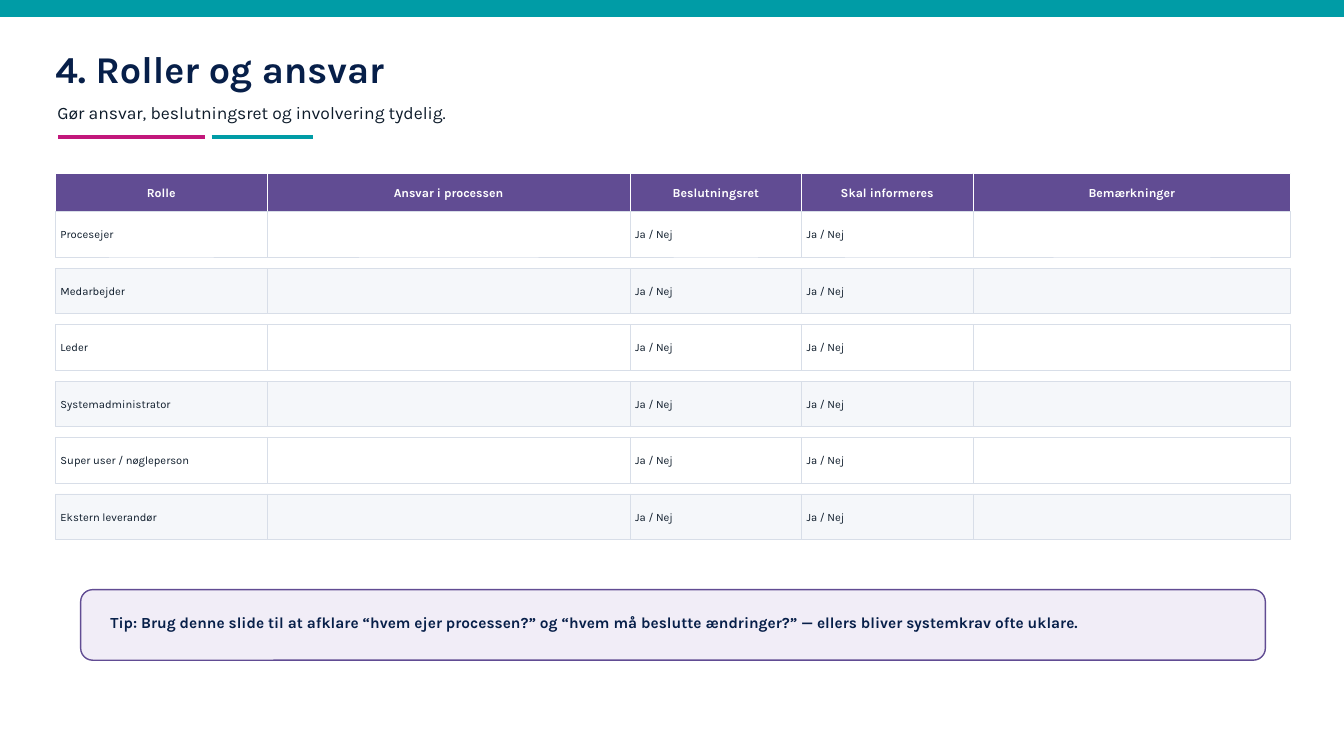
"""Build the slide on roles and responsibilities."""
import pptx
import pptx.util
import pptx.dml.color
import pptx.enum.shapes
import pptx.enum.text
import pptx.oxml.ns
import lxml.etree

Inches = pptx.util.Inches
Shape = pptx.enum.shapes.MSO_SHAPE
Align = pptx.enum.text.PP_ALIGN

FONT = "Karla"
COLORS = {
    "teal": "009CA6",
    "pink": "C2187B",
    "purple": "614C93",
    "lilac": "F1EDF7",
    "navy": "071F49",
    "ink": "0D1B2A",
    "white": "FFFFFF",
    "pale": "F5F7FA",
    "grey": "D8DEE8",
}
HEADS = [
    ("Rolle", 2.1),
    ("Ansvar i processen", 3.6),
    ("Beslutningsret", 1.7),
    ("Skal informeres", 1.7),
    ("Bemærkninger", 3.15),
]
ROLES = [
    "Procesejer",
    "Medarbejder",
    "Leder",
    "Systemadministrator",
    "Super user / nøgleperson",
    "Ekstern leverandør",
]
CHOICE = "Ja / Nej"
TIP = ("Tip: Brug denne slide til at afklare “hvem ejer processen?” og "
       "“hvem må beslutte ændringer?” — ellers bliver systemkrav ofte uklare.")


def color(name):
    return pptx.dml.color.RGBColor.from_string(COLORS[name])


def write(shape, text, size, ink, bold=False, align=Align.LEFT, inset=(0, 0, 0, 0)):
    frame = shape.text_frame
    frame.word_wrap = True
    frame.vertical_anchor = pptx.enum.text.MSO_ANCHOR.MIDDLE
    (frame.margin_left, frame.margin_top,
     frame.margin_right, frame.margin_bottom) = map(Inches, inset)
    para = frame.paragraphs[0]
    para.text = text
    para.alignment = align
    para.font.name = FONT
    para.font.size = pptx.util.Pt(size)
    para.font.bold = bold
    para.font.color.rgb = color(ink)


def add_label(slide, box, text, size, ink, bold=False):
    label = slide.shapes.add_textbox(*map(Inches, box))
    write(label, text, size, ink, bold)


def add_box(slide, box, fill, line, width, kind=Shape.RECTANGLE):
    shape = slide.shapes.add_shape(kind, *map(Inches, box))
    shape.shadow.inherit = False
    shape.fill.solid()
    shape.fill.fore_color.rgb = color(fill)
    shape.line.color.rgb = color(line)
    shape.line.width = pptx.util.Pt(width)
    return shape


def add_rule(slide, left, right, top, ink):
    rule = slide.shapes.add_connector(
        pptx.enum.shapes.MSO_CONNECTOR.STRAIGHT,
        Inches(left), Inches(top), Inches(right), Inches(top))
    rule.line.color.rgb = color(ink)
    rule.line.width = pptx.util.Pt(3)
    props = rule.element.spPr
    lxml.etree.SubElement(props, pptx.oxml.ns.qn("a:effectLst"))


def add_row(slide, top, high, texts, fill, line, style):
    left = 0.55
    for text, (_, wide) in zip(texts, HEADS):
        cell = add_box(slide, (left, top, wide, high), fill, line, 0.4)
        if text:
            write(cell, text, **style)
        left += wide


def add_grid(slide):
    head = dict(size=8.8, ink="white", bold=True, align=Align.CENTER)
    body = dict(size=8, ink="ink", inset=(0.05, 0, 0.05, 0))
    add_row(slide, 1.72, 0.38, [name for name, _ in HEADS], "purple", "white", head)
    for i, role in enumerate(ROLES):
        fill = "pale" if i % 2 else "white"
        texts = [role, "", CHOICE, CHOICE, ""]
        add_row(slide, 2.1 + 0.56 * i, 0.45, texts, fill, "grey", body)


def add_tip(slide):
    card = add_box(slide, (0.8, 5.85, 11.75, 0.7), "lilac", "purple", 1,
                   Shape.ROUNDED_RECTANGLE)
    card.adjustments[0] = 0.17
    write(card, TIP, 11, "navy", bold=True, inset=(0.26, 0, 0.26, 0.06))


def main():
    deck = pptx.Presentation()
    deck.slide_width = Inches(13.33)
    deck.slide_height = Inches(7.5)
    slide = deck.slides.add_slide(deck.slide_layouts[6])
    add_box(slide, (0, 0, 13.33, 0.16), "teal", "teal", 1)
    add_label(slide, (0.55, 0.45, 8.8, 0.45), "4. Roller og ansvar", 27, "navy", True)
    add_label(slide, (0.57, 0.95, 9.8, 0.33),
              "Gør ansvar, beslutningsret og involvering tydelig.", 12.5, "ink")
    add_rule(slide, 0.58, 2.03, 1.36, "pink")
    add_rule(slide, 2.1, 3.1, 1.36, "teal")
    add_grid(slide)
    add_tip(slide)
    deck.save("out.pptx")


if __name__ == "__main__":
    main()
